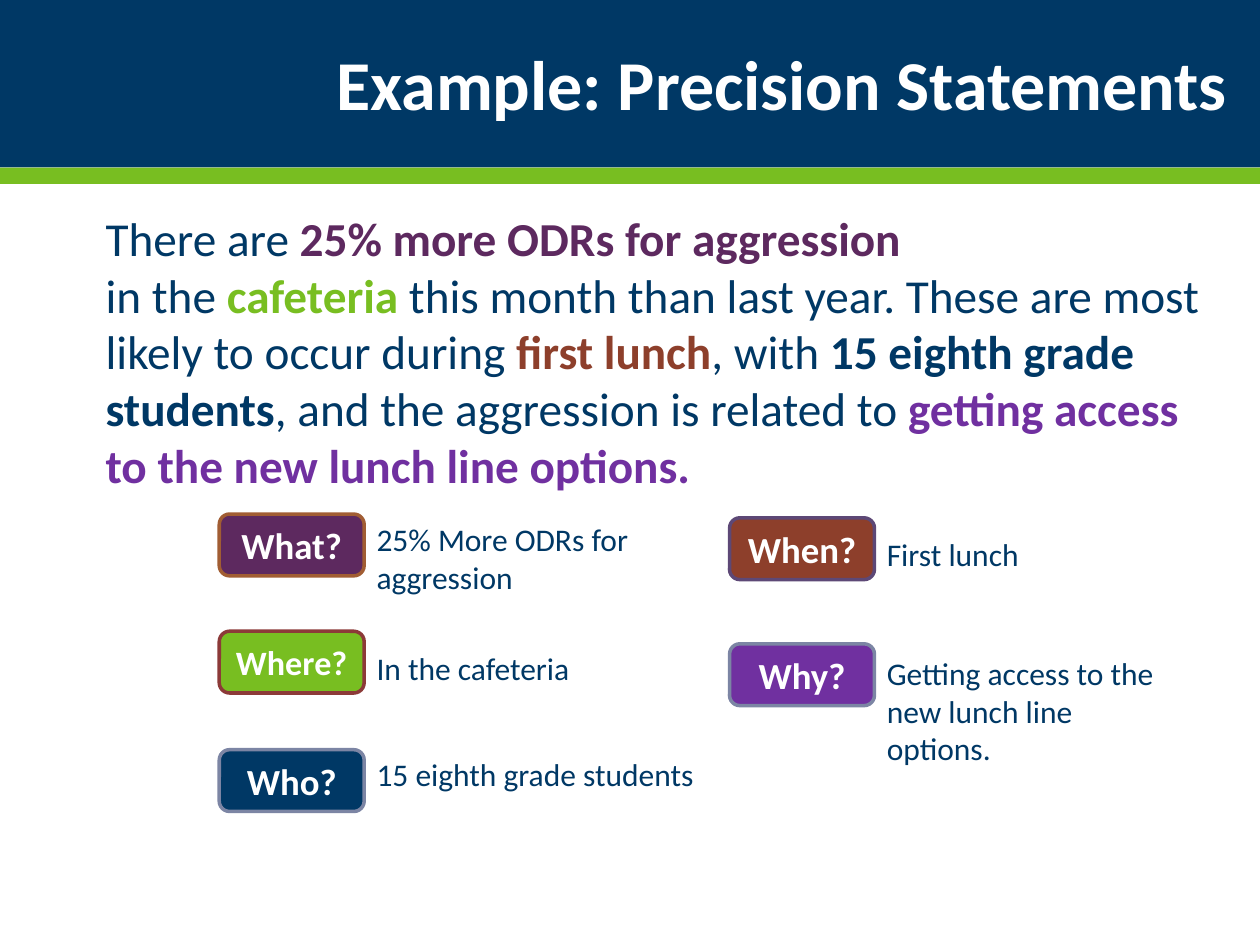
"""Build the slide of example precision statements."""
from pptx import Presentation
from pptx.dml.color import RGBColor
from pptx.enum.shapes import MSO_SHAPE
from pptx.enum.text import MSO_ANCHOR, MSO_AUTO_SIZE, PP_ALIGN
from pptx.util import Inches, Pt

COLORS = {
    "navy": "003865", "green": "78BE21", "white": "FFFFFF", "plum": "5D295F",
    "rust": "8D3F2B", "purple": "7030A0", "slate": "7C85A4", "violet": "5D4876",
    "red": "8C3A38", "copper": "A15D33",
}
TITLE = "Example: Precision Statements"
BANDS = [(0, 1.33, "navy"), (1.33, 0.13, "green")]
STATEMENT = [
    ("There are ", "navy", False),
    ("25% more ODRs for aggression", "plum", True),
    ("\n", "navy", False),
    ("in the ", "navy", False),
    ("cafeteria", "green", True),
    (" this month than last year. These are most likely to occur during ", "navy", False),
    ("first lunch", "rust", True),
    (", with ", "navy", False),
    ("15 eighth grade students", "navy", True),
    (", and the aggression is related to ", "navy", False),
    ("getting access to the new lunch line options.", "purple", True),
]
LEFT_COLUMN, RIGHT_COLUMN = 1.74, 5.79
LABEL_WIDTH, LABEL_HEIGHT = 1.15, 0.49
QUESTIONS = [
    ("Why?", 21, "purple", "slate", RIGHT_COLUMN, 5.11,
     "Getting access to the new lunch line options.", 5.14, 2.32, 1.01),
    ("When?", 21, "rust", "violet", RIGHT_COLUMN, 4.11, "First lunch", 4.2, 2.76, 0.4),
    ("Who?", 21, "navy", "slate", LEFT_COLUMN, 5.95,
     "15 eighth grade students", 5.94, 5.16, 0.4),
    ("Where?", 19.5, "green", "red", LEFT_COLUMN, 5.01, "In the cafeteria", 5.1, 2.76, 0.4),
    ("What?", 21, "plum", "copper", LEFT_COLUMN, 4.08,
     "25% More ODRs for aggression", 4.08, 2.76, 0.71),
]


def rgb(name):
    """Return the named colour."""
    return RGBColor.from_string(COLORS[name])


def write(shape, text, *, size, color="navy", bold=False,
          align=PP_ALIGN.LEFT, anchor=MSO_ANCHOR.TOP):
    """Write a string, or (text, colour, bold) pieces, into a shape."""
    frame = shape.text_frame
    frame.word_wrap = True
    frame.auto_size = MSO_AUTO_SIZE.NONE
    frame.vertical_anchor = anchor
    paragraph = frame.paragraphs[0]
    paragraph.alignment = align
    pieces = [(text, color, bold)] if isinstance(text, str) else text
    for words, tint, strong in pieces:
        if words == "\n":
            paragraph.add_line_break()
            continue
        run = paragraph.add_run()
        run.text = words
        run.font.name = "Calibri"
        run.font.size = Pt(size)
        run.font.bold = strong
        run.font.color.rgb = rgb(tint)
    return paragraph


def add_block(slide, kind, left, top, width, height, fill, outline=None):
    """Add a filled shape with an optional outline."""
    block = slide.shapes.add_shape(
        kind, Inches(left), Inches(top), Inches(width), Inches(height))
    block.shadow.inherit = False
    block.fill.solid()
    block.fill.fore_color.rgb = rgb(fill)
    if outline:
        block.line.color.rgb = rgb(outline)
        block.line.width = Pt(2)
    else:
        block.line.fill.background()
    return block


def add_text(slide, left, top, width, height, text, **style):
    """Add a text box."""
    box = slide.shapes.add_textbox(
        Inches(left), Inches(top), Inches(width), Inches(height))
    write(box, text, **style)


def main():
    """Build and save the slide."""
    deck = Presentation()
    deck.slide_width, deck.slide_height = Inches(10), Inches(7.5)
    slide = deck.slides.add_slide(deck.slide_layouts[5])

    for top, height, fill in BANDS:
        add_block(slide, MSO_SHAPE.RECTANGLE, 0, top, 10, height, fill)

    for (question, size, fill, outline, left, top,
         answer, answer_top, width, height) in QUESTIONS:
        add_text(slide, left + LABEL_WIDTH, answer_top, width, height, answer, size=18)
        label = add_block(slide, MSO_SHAPE.ROUNDED_RECTANGLE, left, top,
                          LABEL_WIDTH, LABEL_HEIGHT, fill, outline)
        write(label, question, size=size, color="white", bold=True,
              align=PP_ALIGN.CENTER, anchor=MSO_ANCHOR.MIDDLE)

    add_text(slide, 0.74, 1.61, 8.97, 3.81, STATEMENT, size=27)

    title = slide.shapes.title
    title.left, title.top = Inches(1.57), Inches(0.3)
    title.width, title.height = Inches(8.43), Inches(0.79)
    heading = write(title, TITLE, size=40, color="white", bold=True,
                    anchor=MSO_ANCHOR.MIDDLE)
    heading.line_spacing = 0.9
    indent = heading._p.get_or_add_pPr()
    indent.set("marL", str(Inches(0.5)))
    indent.set("indent", str(Inches(0.5)))
    title.element.getparent().append(title.element)

    deck.save("out.pptx")


if __name__ == "__main__":
    main()
